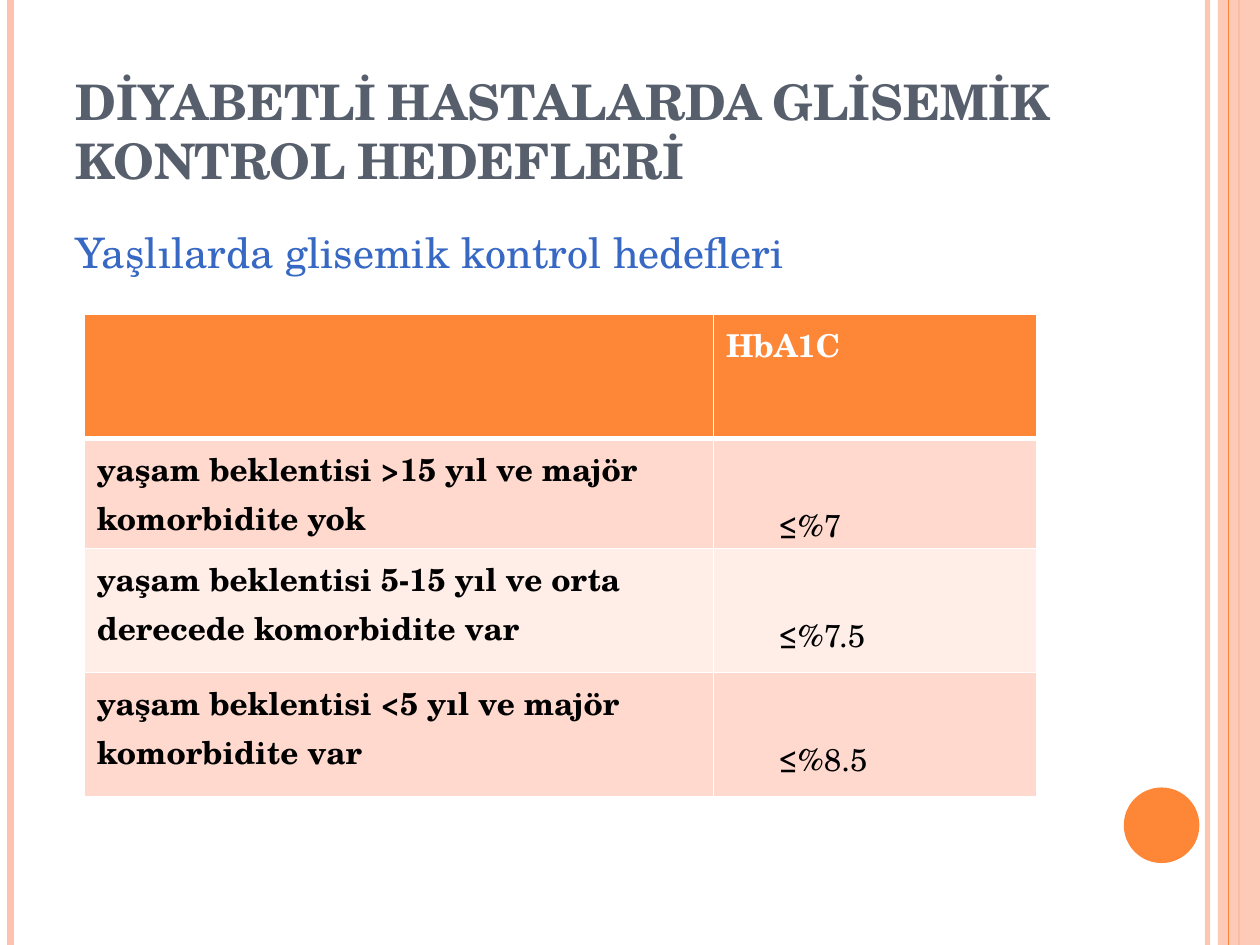
"""Build the slide on glycaemic control targets for patients with diabetes."""
import pptx
import pptx.dml.color
import pptx.enum.shapes
import pptx.enum.text
import pptx.oxml
import pptx.oxml.ns
import pptx.util
from lxml import etree

Pt = pptx.util.Pt
SHAPE = pptx.enum.shapes.MSO_SHAPE
ALIGN = pptx.enum.text.PP_ALIGN
ANCHOR = pptx.enum.text.MSO_ANCHOR
qn = pptx.oxml.ns.qn

TITLE = "DİYABETLİ HASTALARDA GLİSEMİK KONTROL HEDEFLERİ"
BODY = "Yaşlılarda glisemik kontrol hedefleri"
ROWS = [
    ("", "HbA1C"),
    ("yaşam beklentisi >15 yıl ve majör komorbidite yok", "≤%7"),
    ("yaşam beklentisi 5-15 yıl ve orta derecede komorbidite var", "≤%7.5"),
    ("yaşam beklentisi <5 yıl ve majör komorbidite var", "≤%8.5"),
]
COL_WIDTHS = [359.5, 185]
ROW_HEIGHTS = [71, 62, 71, 71]
BANDS = ["FFEDE8", "FFD9CE"]
FONT = "TeX Gyre Schola"
ORANGE, PEACH, WHITE = "FE8637", "FEC3AE", "FFFFFF"
WIDTH, HEIGHT = 720, 540
RULES = [(690, PEACH, 3, 93), (6, PEACH, 4.5, 100), (708, ORANGE, 1.5, 100), (702, ORANGE, 0.75, 100)]


def rgb(value):
    return pptx.dml.color.RGBColor.from_string(value)


def set_alpha(sp, percent):
    color = next(sp._element.spPr.iter(qn("a:srgbClr")))
    etree.SubElement(color, qn("a:alpha"), val=str(percent * 1000))


def add_rule(slide, x, color, weight, opacity):
    line = slide.shapes.add_connector(pptx.enum.shapes.MSO_CONNECTOR.STRAIGHT, Pt(x), Pt(0), Pt(x), Pt(HEIGHT))
    line.line.color.rgb = rgb(color)
    line.line.width = Pt(weight)
    if opacity < 100:
        set_alpha(line, opacity)
    etree.SubElement(line._element.spPr, qn("a:effectLst"))


def add_block(slide, kind, box, color):
    sp = slide.shapes.add_shape(kind, *map(Pt, box))
    sp.shadow.inherit = False
    sp.fill.solid()
    sp.fill.fore_color.rgb = rgb(color)
    sp.line.fill.background()
    return sp


def format_text(tf, size, color, bold):
    for p in tf.paragraphs:
        for r in p.runs:
            r.font.name = FONT
            r.font.size = Pt(size)
            r.font.bold = bold
            r.font.color.rgb = rgb(color)


def fill_placeholder(sp, box, text, size, color, bold, anchor):
    sp.left, sp.top, sp.width, sp.height = map(Pt, box)
    tf = sp.text_frame
    tf.text = text
    tf.word_wrap = True
    tf.auto_size = pptx.enum.text.MSO_AUTO_SIZE.NONE
    tf.vertical_anchor = anchor
    format_text(tf, size, color, bold)
    p = tf.paragraphs[0]
    p.alignment = ALIGN.LEFT
    return p


def set_borders(cell, row):
    weights = {"L": 1, "R": 1, "T": 3 if row == 1 else 1, "B": 3 if row == 0 else 1}
    tc_pr = cell._tc.get_or_add_tcPr()
    for i, (side, weight) in enumerate(weights.items()):
        ln = etree.Element(qn(f"a:ln{side}"), w=str(Pt(weight)))
        fill = etree.SubElement(ln, qn("a:solidFill"))
        etree.SubElement(fill, qn("a:srgbClr"), val=WHITE)
        tc_pr.insert(i, ln)


def add_targets(slide):
    table = slide.shapes.add_table(
        len(ROWS), len(COL_WIDTHS), Pt(48.2), Pt(179.5), Pt(sum(COL_WIDTHS)), Pt(sum(ROW_HEIGHTS))
    ).table
    for column, width in zip(table.columns, COL_WIDTHS):
        column.width = Pt(width)
    for i, (row, height, texts) in enumerate(zip(table.rows, ROW_HEIGHTS, ROWS)):
        row.height = Pt(height)
        for j, (cell, text) in enumerate(zip(row.cells, texts)):
            cell.text = text
            cell.fill.solid()
            cell.fill.fore_color.rgb = rgb(BANDS[i % 2] if i else ORANGE)
            set_borders(cell, i)
            is_value = i > 0 and j == 1
            format_text(cell.text_frame, 18, "000000" if i else WHITE, not is_value)
            if is_value:
                cell.margin_top, cell.margin_bottom = Pt(36), Pt(0)
                cell.text_frame.paragraphs[0]._p.get_or_add_pPr().set("marL", str(Pt(30)))


def main():
    prs = pptx.Presentation()
    prs.slide_width, prs.slide_height = Pt(WIDTH), Pt(HEIGHT)
    s = prs.slides.add_slide(prs.slide_layouts[1])

    for rule in RULES[:3]:
        add_rule(s, *rule)
    band = add_block(s, SHAPE.RECTANGLE, (696, 0, 24, HEIGHT), PEACH)
    set_alpha(band, 87)
    add_rule(s, *RULES[3])
    add_block(s, SHAPE.OVAL, (642.2, 450, 43.2, 43.2), ORANGE)

    title, body = s.placeholders
    p = fill_placeholder(title, (36, 21.6, 588, 90), TITLE, 28, "575F6D", True, ANCHOR.BOTTOM)
    p.runs[0].font._element.set("cap", "small")

    p = fill_placeholder(body, (36, 126, 588, 384), BODY, 24, "3668C4", False, ANCHOR.TOP)
    p.space_before = Pt(6)
    p_pr = p._p.get_or_add_pPr()
    p_pr.set("marL", str(Pt(21.6)))
    p_pr.set("indent", str(Pt(-21.6)))
    etree.SubElement(p_pr, qn("a:buNone"))

    add_targets(s)
    prs.save("out.pptx")


if __name__ == "__main__":
    main()
